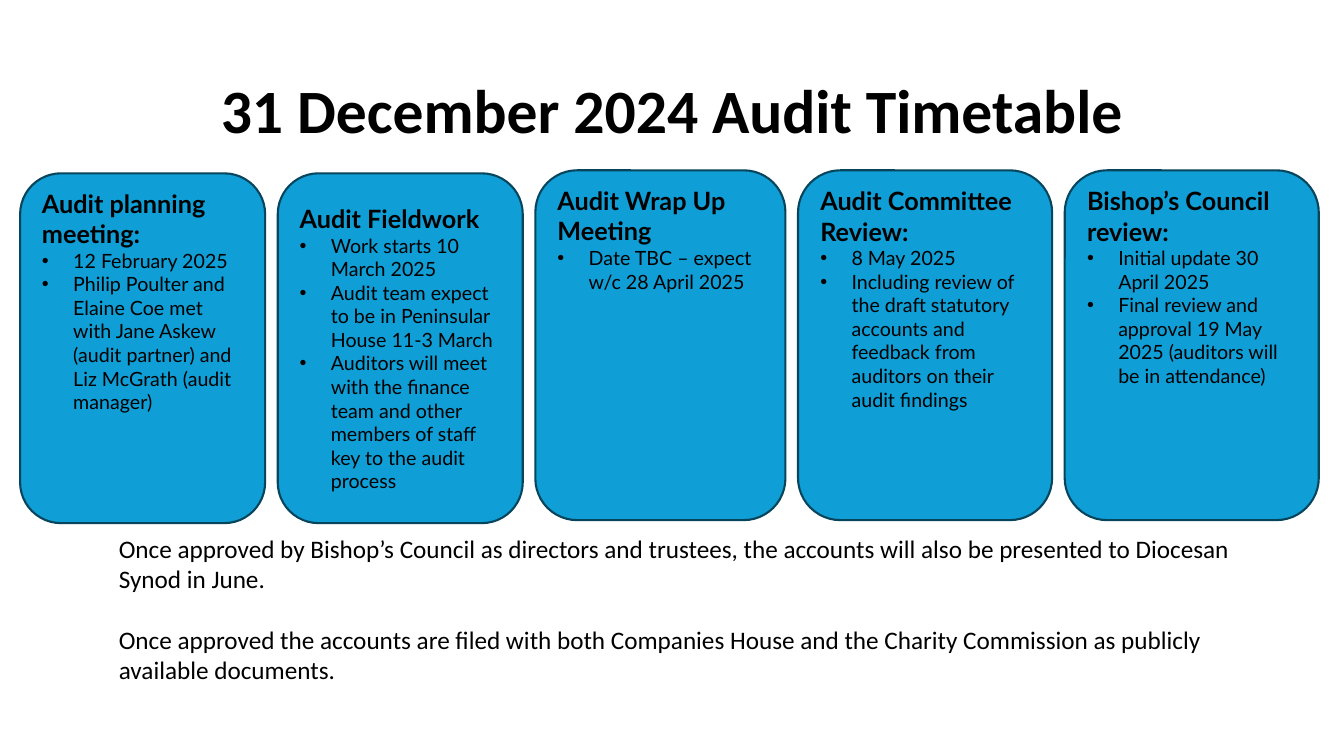
from lxml import etree
from pptx import Presentation
from pptx.dml.color import RGBColor
from pptx.enum.shapes import MSO_SHAPE
from pptx.enum.text import MSO_ANCHOR, PP_ALIGN
from pptx.oxml.ns import qn
from pptx.util import Inches, Pt

ROUNDED = MSO_SHAPE.ROUNDED_RECTANGLE
TOP, MIDDLE = MSO_ANCHOR.TOP, MSO_ANCHOR.MIDDLE
LEFT, CENTER = PP_ALIGN.LEFT, PP_ALIGN.CENTER

COLORS = {"card": "0F9ED5", "outline": "07455D", "text": "000000"}
TITLE = "31 December 2024 Audit Timetable"
# Heading, bullets, card top, card width, top inset
STAGES = [
    ("Audit planning meeting:",
     ["12 February 2025",
      "Philip Poulter and Elaine Coe met with Jane Askew (audit partner) "
      "and Liz McGrath (audit manager)"], 1.72, 2.43, 0.03),
    ("Audit Fieldwork",
     ["Work starts 10 March 2025",
      "Audit team expect to be in Peninsular House 11-3 March",
      "Auditors will meet with the finance team and other members of staff "
      "key to the audit process"], 1.72, 2.43, 0.18),
    ("Audit Wrap Up Meeting",
     ["Date TBC – expect w/c 28 April 2025"], 1.69, 2.48, 0.03),
    ("Audit Committee Review:",
     ["8 May 2025",
      "Including review of the draft statutory accounts and feedback from "
      "auditors on their audit findings"], 1.69, 2.52, 0.03),
    ("Bishop’s Council review:",
     ["Initial update 30 April 2025",
      "Final review and approval 19 May 2025 (auditors will be in attendance)"],
     1.69, 2.52, 0.03),
]
CLOSING = [
    "Once approved by Bishop’s Council as directors and trustees, the accounts "
    "will also be presented to Diocesan Synod in June.",
    "Once approved the accounts are filed with both Companies House and the "
    "Charity Commission as publicly available documents.",
]
FIRST_LEFT, CARD_GAP, CARD_HEIGHT = 0.2, 0.125, 3.47
BULLET_INDENT = Inches(0.31)


def style(para, font, size, bold=False):
    for span in para.runs:
        span.font.name = font
        span.font.size = Pt(size)
        span.font.bold = bold
        span.font.color.rgb = RGBColor.from_string(COLORS["text"])


def add_bullet(para):
    props = para._p.get_or_add_pPr()
    props.set("marL", str(BULLET_INDENT))
    props.set("indent", str(-BULLET_INDENT))
    etree.SubElement(props, qn("a:buFont")).set("typeface", "Arial")
    etree.SubElement(props, qn("a:buChar")).set("char", "•")


def add_text_box(page, left, top, width, height, anchor):
    box = page.shapes.add_textbox(Inches(left), Inches(top), Inches(width), Inches(height))
    box.text_frame.word_wrap = True
    box.text_frame.vertical_anchor = anchor
    return box.text_frame


def add_card(page, left, heading, bullets, top, width, inset):
    card = page.shapes.add_shape(
        ROUNDED, Inches(left), Inches(top), Inches(width), Inches(CARD_HEIGHT))
    card.shadow.inherit = False
    card.fill.solid()
    card.fill.fore_color.rgb = RGBColor.from_string(COLORS["card"])
    card.line.color.rgb = RGBColor.from_string(COLORS["outline"])
    card.line.width = Pt(1.5)
    frame = card.text_frame
    frame.word_wrap = True
    frame.vertical_anchor = TOP
    frame.margin_top = Inches(inset)
    frame.text = "\n".join([heading] + bullets)
    for index, para in enumerate(frame.paragraphs):
        para.alignment = LEFT
        if index:
            add_bullet(para)
        style(para, "Lato", 14 if index else 18, bold=index == 0)


def main():
    deck = Presentation()
    deck.slide_width, deck.slide_height = Inches(13.33), Inches(7.5)
    page = deck.slides.add_slide(deck.slide_layouts[6])

    # Title
    frame = add_text_box(page, 0.92, 0.4, 11.5, 1.45, MIDDLE)
    frame.text = TITLE
    para = frame.paragraphs[0]
    para.alignment = CENTER
    para.line_spacing = 0.9
    style(para, "Calibri", 44, bold=True)

    # Closing remarks
    frame = add_text_box(page, 1.08, 5.24, 11.33, 1.62, TOP)
    frame.text = "\n".join(CLOSING)
    for index, para in enumerate(frame.paragraphs):
        if index:
            para.space_before = Pt(22)
        style(para, "Calibri", 18)

    # Row of stage cards
    left = FIRST_LEFT
    for heading, bullets, top, width, inset in STAGES:
        add_card(page, left, heading, bullets, top, width, inset)
        left += width + CARD_GAP

    deck.save("out.pptx")


if __name__ == "__main__":
    main()
